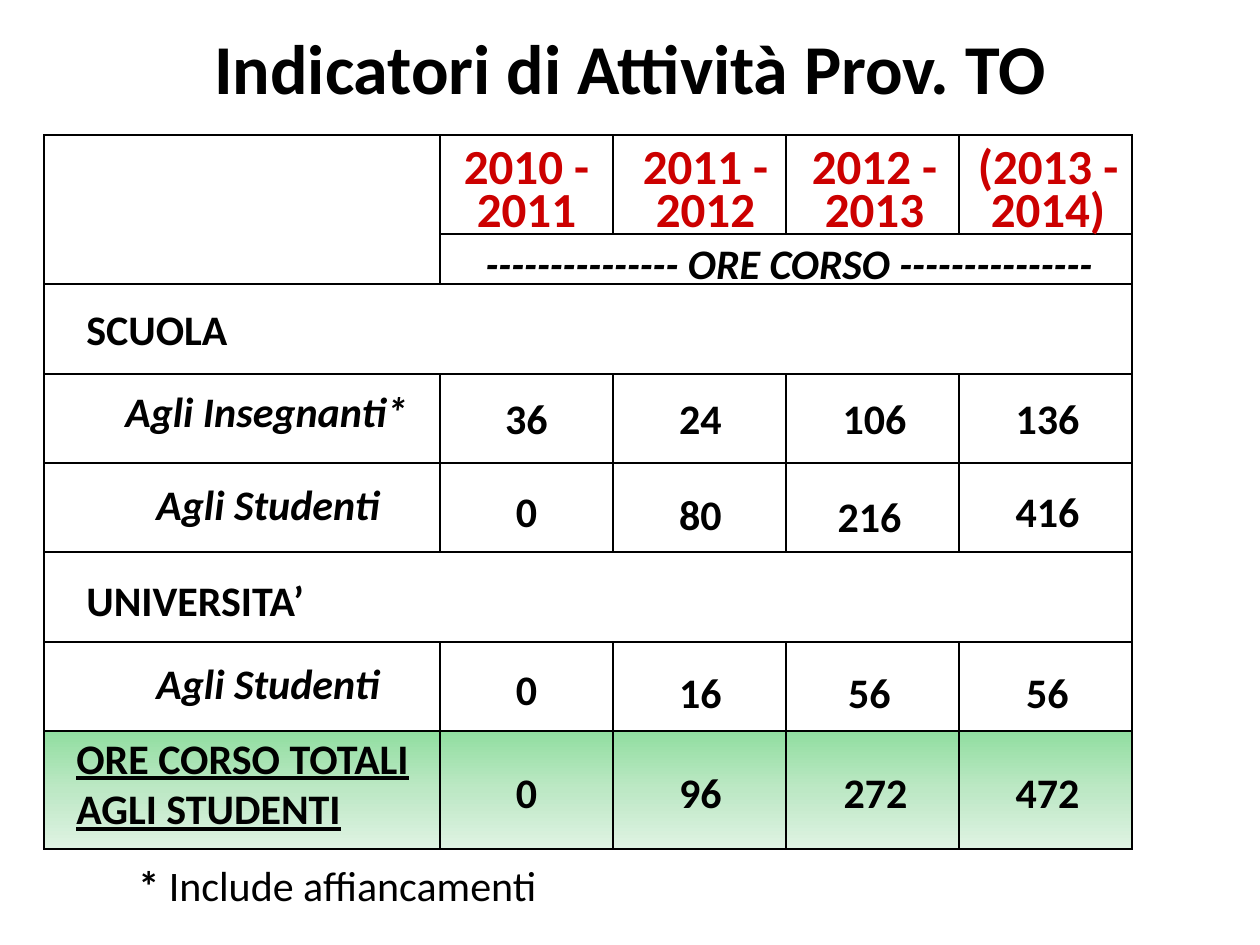
from lxml.etree import SubElement
from pptx import Presentation
from pptx.dml.color import RGBColor
from pptx.enum.text import MSO_ANCHOR, MSO_AUTO_SIZE, PP_ALIGN
from pptx.oxml.ns import qn
from pptx.util import Emu, Pt

PX_PER_INCH = 126
FONT = "Calibri"
BLACK, RED = "000000", "CC0000"
GREEN_STOPS = [(0, "91DEA0"), (50, "BDE8C5"), (100, "DFF3E3")]

# Table grid
TABLE_LEFT, TABLE_TOP = 44, 135
COLUMN_WIDTHS = [396] + [173] * 4
ROW_HEIGHTS = [99, 50, 90, 89, 89, 90, 89, 118]
MERGES = [((0, 0), (1, 0)), ((1, 1), (1, 4)), ((2, 0), (2, 4)), ((5, 0), (5, 4))]

# Text: wording, left, top, width
YEARS = [
    ("2010 - 2011", 442, 169), ("2011 - 2012", 621, 169),
    ("2012 - 2013", 790, 169), ("(2013 - 2014)", 949, 198),
]
SECTIONS = [("SCUOLA", 74, 297, 189), ("UNIVERSITA’", 74, 568, 287)]
AUDIENCES = [
    ("Agli Insegnanti*", 113, 379, 328),
    ("Agli Studenti", 144, 472, 295),
    ("Agli Studenti", 144, 651, 297),
]

# Hours: row top, then value with its horizontal and vertical shift
VALUE_LEFTS = [437, 611, 785, 958]
VALUE_WIDTH, LINE_HEIGHT = 179, 64
HOURS = [
    (386, [("36", 0, 0), ("24", 0, 0), ("106", 0, 0), ("136", 0, 0)]),
    (479, [("0", 0, 0), ("80", 0, 3), ("216", -5, 5), ("416", 0, 0)]),
    (657, [("0", 0, 0), ("16", 0, 3), ("56", -5, 3), ("56", 0, 3)]),
    (760, [("0", 0, 0), ("96", 0, 0), ("272", 1, 0), ("472", 0, 0)]),
]


def px(length):
    return Emu(round(length * 914400 / PX_PER_INCH))


def color(value):
    return RGBColor.from_string(value)


def add_text(slide, text, left, top, width, height=LINE_HEIGHT, size=24, ink=BLACK,
             italic=False, underline=False, centered=False, spacing=None):
    box = slide.shapes.add_textbox(px(left), px(top), px(width), px(height))
    frame = box.text_frame
    frame.word_wrap = True
    frame.auto_size = MSO_AUTO_SIZE.SHAPE_TO_FIT_TEXT
    frame.text = text
    for paragraph in frame.paragraphs:
        paragraph.alignment = PP_ALIGN.CENTER if centered else PP_ALIGN.LEFT
        if spacing:
            paragraph.line_spacing = Pt(spacing)
        for run in paragraph.runs:
            font = run.font
            font.name, font.size, font.bold = FONT, Pt(size), True
            font.italic, font.underline = italic, underline
            font.color.rgb = color(ink)
    return frame


def add_borders(cell):
    properties = cell._tc.get_or_add_tcPr()
    for side in ("a:lnL", "a:lnR", "a:lnT", "a:lnB"):
        line = SubElement(properties, qn(side), w=str(Pt(1)))
        fill = SubElement(line, qn("a:solidFill"))
        SubElement(fill, qn("a:srgbClr"), val=BLACK)


def add_gradient(cell):
    gradient = SubElement(cell._tc.get_or_add_tcPr(), qn("a:gradFill"), rotWithShape="1")
    stops = SubElement(gradient, qn("a:gsLst"))
    for position, value in GREEN_STOPS:
        stop = SubElement(stops, qn("a:gs"), pos=str(position * 1000))
        SubElement(stop, qn("a:srgbClr"), val=value)
    SubElement(gradient, qn("a:lin"), ang=str(90 * 60000), scaled="0")


def add_grid(slide):
    rows, columns = len(ROW_HEIGHTS), len(COLUMN_WIDTHS)
    table = slide.shapes.add_table(
        rows, columns, px(TABLE_LEFT), px(TABLE_TOP),
        px(sum(COLUMN_WIDTHS)), px(sum(ROW_HEIGHTS))).table
    table.first_row = table.horz_banding = False
    for column, width in zip(table.columns, COLUMN_WIDTHS):
        column.width = px(width)
    for row, height in zip(table.rows, ROW_HEIGHTS):
        row.height = px(height)
    for row in range(rows):
        for column in range(columns):
            cell = table.cell(row, column)
            cell.margin_top = cell.margin_bottom = 0
            add_borders(cell)
            if row == rows - 1:
                add_gradient(cell)
            else:
                cell.fill.background()
    for first, last in MERGES:
        table.cell(*first).merge(table.cell(*last))


def main():
    presentation = Presentation()
    presentation.slide_width, presentation.slide_height = px(1260), px(945)
    slide = presentation.slides.add_slide(presentation.slide_layouts[6])

    # Title and table
    title = add_text(slide, "Indicatori di Attività Prov. TO", 63, 16, 1134, 100,
                     size=40, centered=True)
    title.auto_size = MSO_AUTO_SIZE.NONE
    title.vertical_anchor = MSO_ANCHOR.MIDDLE
    add_grid(slide)

    # Column headings
    for text, left, width in YEARS:
        add_text(slide, text, left, 144, width, 101, size=28, ink=RED,
                 centered=True, spacing=25)
    add_text(slide, "--------------- ORE CORSO ---------------", 442, 231, 694,
             italic=True, centered=True)

    # Row labels
    for section in SECTIONS:
        add_text(slide, *section)
    for audience in AUDIENCES:
        add_text(slide, *audience, italic=True)
    add_text(slide, "ORE CORSO TOTALI\nAGLI STUDENTI", 64, 726, 377, 115, underline=True)

    # Hours
    for top, values in HOURS:
        for left, (text, shift_x, shift_y) in zip(VALUE_LEFTS, values):
            add_text(slide, text, left + shift_x, top + shift_y, VALUE_WIDTH, centered=True)

    # Footnote
    paragraph = add_text(slide, "* ", 126, 853, 476).paragraphs[0]
    note = paragraph.add_run()
    note.text = "Include affiancamenti"
    note.font.name, note.font.size, note.font.bold = FONT, Pt(24), False
    note.font.color.rgb = color(BLACK)

    presentation.save("out.pptx")


if __name__ == "__main__":
    main()
